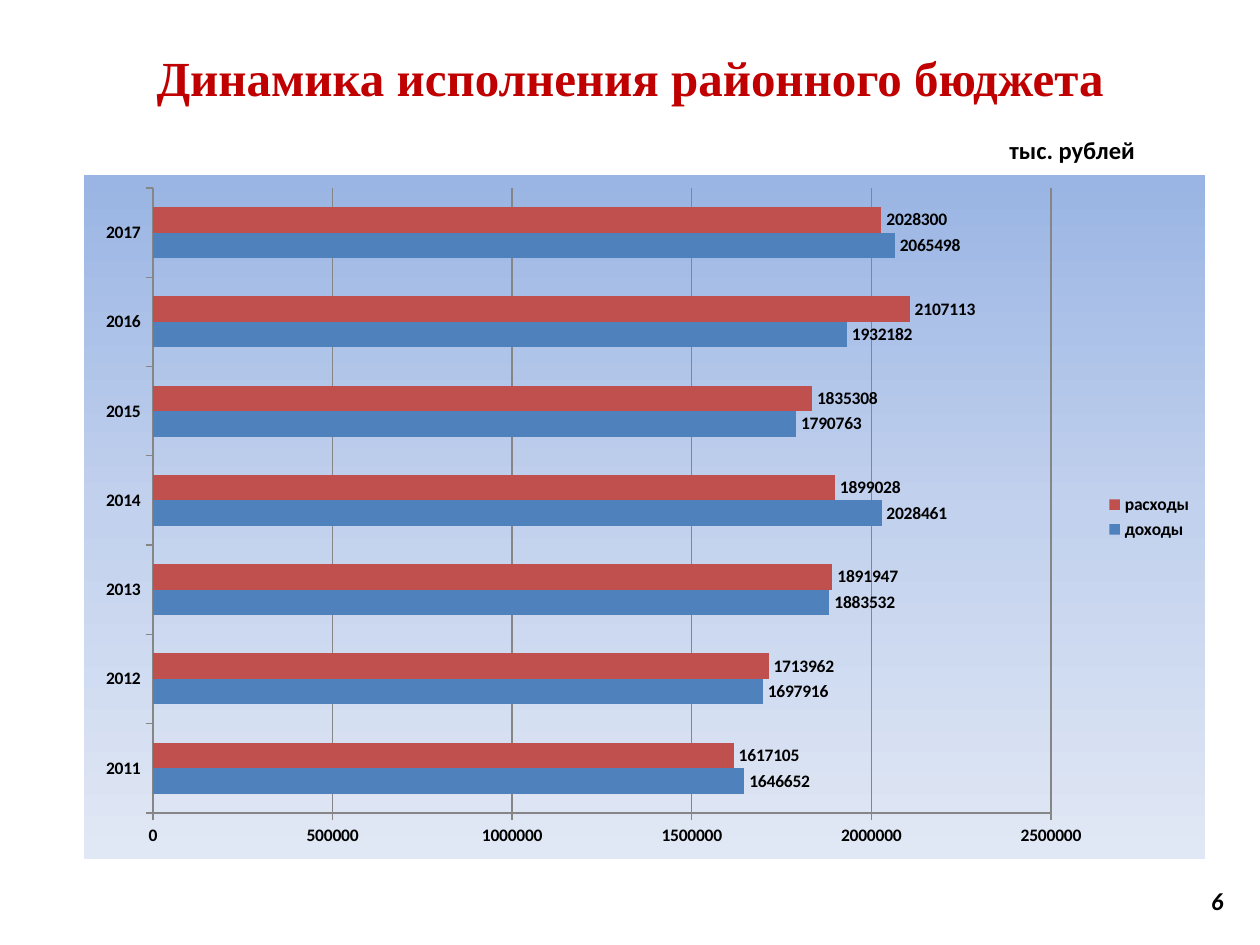
import dataclasses

import lxml.etree
import pptx
import pptx.chart.data
import pptx.dml.color
import pptx.enum.chart
import pptx.enum.text
import pptx.oxml
import pptx.oxml.ns
import pptx.util

EMU_PER_PX = 914400 / 126
ALIGN = pptx.enum.text.PP_ALIGN
ANCHOR = pptx.enum.text.MSO_ANCHOR


@dataclasses.dataclass(frozen=True)
class Theme:
    heading_font: str = "Times New Roman"
    body_font: str = "Calibri"
    heading_size: int = 28
    note_size: int = 14
    chart_size: int = 10
    heading: str = "C00000"
    ink: str = "000000"
    axis: str = "868686"
    income: str = "4F81BD"
    expenses: str = "C0504D"
    backdrop: tuple[tuple[int, str], ...] = ((0, "9AB5E4"), (50, "C2D1ED"), (100, "E1E8F5"))


THEME = Theme()


@dataclasses.dataclass(frozen=True)
class Area:
    left: int
    top: int
    width: int
    height: int

    def emu(self) -> tuple[int, ...]:
        return tuple(px(length) for length in dataclasses.astuple(self))


@dataclasses.dataclass(frozen=True)
class Caption:
    text: str
    area: Area
    align: int
    anchor: int
    size: int = THEME.note_size
    font: str = THEME.body_font
    color: str = THEME.ink
    italic: bool = False
    wrap: bool = True


@dataclasses.dataclass(frozen=True)
class BudgetSeries:
    name: str
    color: str
    values: tuple[int, ...]


PAGE = Area(0, 0, 1260, 945)
CHART = Area(84, 175, 1121, 684)
PLOT = Area(153, 188, 898, 625)
YEARS = [str(year) for year in range(2011, 2018)]
BUDGET = (
    BudgetSeries("доходы", THEME.income,
                 (1646652, 1697916, 1883532, 2028461, 1790763, 1932182, 2065498)),
    BudgetSeries("расходы", THEME.expenses,
                 (1617105, 1713962, 1891947, 1899028, 1835308, 2107113, 2028300)),
)
TITLE = Caption("Динамика исполнения районного бюджета", Area(0, 0, 1260, 154),
                ALIGN.CENTER, ANCHOR.MIDDLE, THEME.heading_size,
                THEME.heading_font, THEME.heading)
NOTES = (
    Caption("тыс. рублей", Area(997, 129, 152, 43), ALIGN.LEFT, ANCHOR.TOP, wrap=False),
    Caption("6", Area(903, 876, 333, 50), ALIGN.RIGHT, ANCHOR.MIDDLE, italic=True),
)


def px(length: int) -> int:
    return round(length * EMU_PER_PX)


def rgb(color: str) -> pptx.dml.color.RGBColor:
    return pptx.dml.color.RGBColor.from_string(color)


def write_caption(box, caption: Caption) -> None:
    box.left, box.top, box.width, box.height = caption.area.emu()
    frame = box.text_frame
    frame.word_wrap = caption.wrap
    frame.auto_size = pptx.enum.text.MSO_AUTO_SIZE.NONE
    frame.vertical_anchor = caption.anchor
    para = frame.paragraphs[0]
    para.alignment = caption.align
    span = para.add_run()
    span.text = caption.text
    span.font.name = caption.font
    span.font.size = pptx.util.Pt(caption.size)
    span.font.bold = True
    span.font.italic = caption.italic
    span.font.color.rgb = rgb(caption.color)


def fill_backdrop(chart) -> None:
    stops = "".join(
        f'<a:gs pos="{percent * 1000}"><a:srgbClr val="{color}"/></a:gs>'
        for percent, color in THEME.backdrop
    )
    properties = pptx.oxml.parse_xml(
        f'<c:spPr {pptx.oxml.ns.nsdecls("c", "a")}><a:gradFill><a:gsLst>{stops}</a:gsLst>'
        '<a:lin ang="5400000" scaled="0"/></a:gradFill><a:ln><a:noFill/></a:ln></c:spPr>'
    )
    chart.element.find(pptx.oxml.ns.qn("c:chart")).addnext(properties)


def place_plot(chart) -> None:
    plot_area = chart.element.find(".//" + pptx.oxml.ns.qn("c:plotArea"))
    for old in plot_area.findall(pptx.oxml.ns.qn("c:layout")):
        plot_area.remove(old)
    layout = lxml.etree.Element(pptx.oxml.ns.qn("c:layout"))
    manual = lxml.etree.SubElement(layout, pptx.oxml.ns.qn("c:manualLayout"))
    settings = {
        "layoutTarget": "inner",
        "xMode": "edge",
        "yMode": "edge",
        "x": (PLOT.left - CHART.left) / CHART.width,
        "y": (PLOT.top - CHART.top) / CHART.height,
        "w": PLOT.width / CHART.width,
        "h": PLOT.height / CHART.height,
    }
    for name, value in settings.items():
        lxml.etree.SubElement(manual, pptx.oxml.ns.qn(f"c:{name}"), val=str(value))
    plot_area.insert(0, layout)


def add_budget_chart(page) -> None:
    data = pptx.chart.data.CategoryChartData(number_format="General")
    data.categories = YEARS
    for item in BUDGET:
        data.add_series(item.name, item.values)
    kind = pptx.enum.chart.XL_CHART_TYPE.BAR_CLUSTERED
    chart = page.shapes.add_chart(kind, *CHART.emu(), data).chart
    chart.has_title = False
    chart.font.name = THEME.body_font
    chart.font.size = pptx.util.Pt(THEME.chart_size)
    chart.font.bold = True
    chart.font.color.rgb = rgb(THEME.ink)
    chart.has_legend = True
    chart.legend.position = pptx.enum.chart.XL_LEGEND_POSITION.RIGHT
    chart.legend.include_in_layout = False

    plot = chart.plots[0]
    plot.gap_width = 150
    plot.overlap = 0
    plot.vary_by_categories = False
    for series, item in zip(plot.series, BUDGET):
        series.format.fill.solid()
        series.format.fill.fore_color.rgb = rgb(item.color)
        labels = series.data_labels
        labels.show_value = True
        labels.position = pptx.enum.chart.XL_LABEL_POSITION.OUTSIDE_END

    value_axis = chart.value_axis
    value_axis.minimum_scale = 0
    value_axis.maximum_scale = 2500000
    value_axis.major_unit = 500000
    value_axis.has_major_gridlines = True
    for axis in (chart.category_axis, value_axis):
        axis.major_tick_mark = pptx.enum.chart.XL_TICK_MARK.OUTSIDE
        axis.format.line.color.rgb = rgb(THEME.axis)
    value_axis.major_gridlines.format.line.color.rgb = rgb(THEME.axis)
    fill_backdrop(chart)
    place_plot(chart)


def main() -> None:
    deck = pptx.Presentation()
    deck.slide_width, deck.slide_height = px(PAGE.width), px(PAGE.height)
    page = deck.slides.add_slide(deck.slide_layouts.get_by_name("Title Only"))
    write_caption(page.shapes.title, TITLE)
    for note in NOTES:
        write_caption(page.shapes.add_textbox(*note.area.emu()), note)
    add_budget_chart(page)
    deck.save("out.pptx")


if __name__ == "__main__":
    main()
